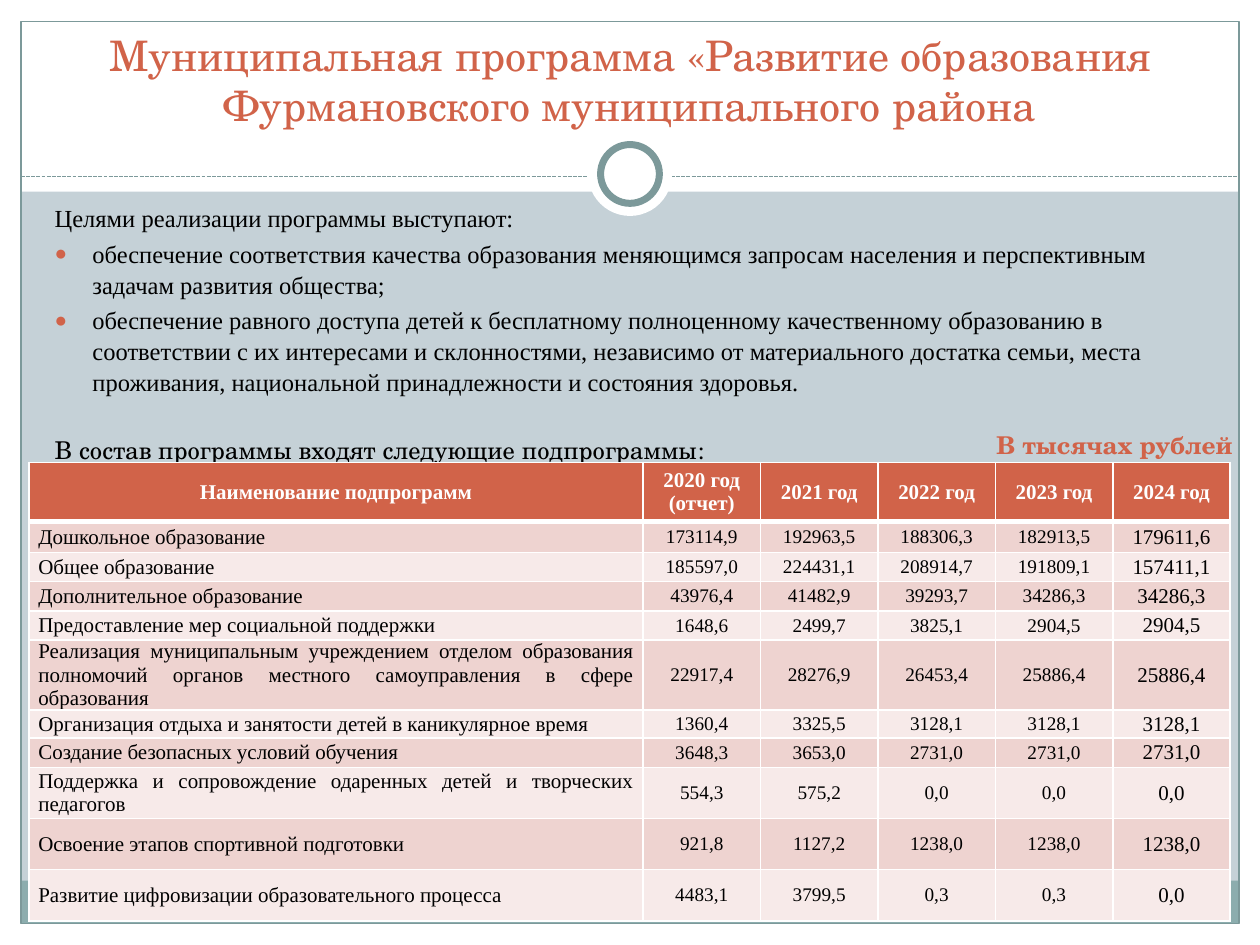
import pptx
import pptx.dml.color
import pptx.enum.dml
import pptx.enum.shapes
import pptx.enum.text
import pptx.oxml.ns
import pptx.util
from lxml import etree

Pt = pptx.util.Pt
Shape = pptx.enum.shapes.MSO_SHAPE
Align = pptx.enum.text.PP_ALIGN
Anchor = pptx.enum.text.MSO_ANCHOR

COLORS = {
    "background": "C5D1D7",
    "white": "FFFFFF",
    "black": "000000",
    "accent": "D16349",
    "frame": "7C999A",
    "strip": "8CADAE",
    "dark_band": "EED3D0",
    "light_band": "F7EAE9",
}
SERIF = "Times New Roman"
DISPLAY = "TeX Gyre Schola"

TITLE = "Муниципальная программа «Развитие образования Фурмановского муниципального района"
GOALS_HEADING = "Целями реализации программы выступают:"
GOALS = [
    "обеспечение соответствия качества образования меняющимся запросам населения и перспективным задачам развития общества;",
    "обеспечение равного доступа детей к бесплатному полноценному качественному образованию в соответствии с их интересами и склонностями, независимо от материального достатка семьи, места проживания, национальной принадлежности и состояния здоровья.",
]
SUBPROGRAMS_HEADING = "В состав программы входят следующие подпрограммы:"

HEADER = ["Наименование подпрограмм", "2020 год (отчет)", "2021 год", "2022 год", "2023 год", "2024 год"]
SUBPROGRAMS = [
    ["Дошкольное образование", "173114,9", "192963,5", "188306,3", "182913,5", "179611,6"],
    ["Общее образование", "185597,0", "224431,1", "208914,7", "191809,1", "157411,1"],
    ["Дополнительное образование", "43976,4", "41482,9", "39293,7", "34286,3", "34286,3"],
    ["Предоставление мер социальной поддержки", "1648,6", "2499,7", "3825,1", "2904,5", "2904,5"],
    ["Реализация муниципальным учреждением отделом образования полномочий органов местного самоуправления в сфере образования",
     "22917,4", "28276,9", "26453,4", "25886,4", "25886,4"],
    ["Организация отдыха и занятости детей в каникулярное время", "1360,4", "3325,5", "3128,1", "3128,1", "3128,1"],
    ["Создание безопасных условий обучения", "3648,3", "3653,0", "2731,0", "2731,0", "2731,0"],
    ["Поддержка и сопровождение одаренных детей и творческих педагогов", "554,3", "575,2", "0,0", "0,0", "0,0"],
    ["Освоение этапов спортивной подготовки", "921,8", "1127,2", "1238,0", "1238,0", "1238,0"],
    ["Развитие цифровизации образовательного процесса", "4483,1", "3799,5", "0,3", "0,3", "0,0"],
]
COLUMN_WIDTHS = [350.8] + [67.1] * 5
ROW_HEIGHTS = [34, 17.5, 16.75, 16.75, 16.75, 40, 16, 16.75, 29.25, 29.25, 29.25]


def color(name):
    return pptx.dml.color.RGBColor.from_string(COLORS[name])


def add_child(parent, tag, **attributes):
    return etree.SubElement(parent, pptx.oxml.ns.qn(tag), attributes)


def add_run(paragraph, text, size, font, color_name, bold=False):
    run = paragraph.add_run()
    run.text = text
    run.font.size = Pt(size)
    run.font.name = font
    run.font.bold = bold
    run.font.color.rgb = color(color_name)


def place(shape, left, top, width, height):
    shape.left, shape.top = Pt(left), Pt(top)
    shape.width, shape.height = Pt(width), Pt(height)


def add_panel(slide, kind, box, fill=None, line=None, line_width=0.75):
    shape = slide.shapes.add_shape(kind, *map(Pt, box))
    shape.shadow.inherit = False
    if fill:
        shape.fill.solid()
        shape.fill.fore_color.rgb = color(fill)
    else:
        shape.fill.background()
    if line:
        shape.line.color.rgb = color(line)
        shape.line.width = Pt(line_width)
    else:
        shape.line.fill.background()


def add_divider(slide):
    divider = slide.shapes.add_connector(
        pptx.enum.shapes.MSO_CONNECTOR.STRAIGHT, Pt(12), Pt(100.8), Pt(708), Pt(100.8))
    divider.line.color.rgb = color("frame")
    divider.line.width = Pt(0.75)
    divider.line.dash_style = pptx.enum.dml.MSO_LINE.SQUARE_DOT
    add_child(divider._element.spPr, "a:effectLst")


def add_frame(slide):
    for box in [(0, 528, 720, 12), (0, 0, 720, 109.5), (0, 0, 12, 540), (708, 0, 12, 540)]:
        add_panel(slide, Shape.RECTANGLE, box, "white")
    add_panel(slide, Shape.RECTANGLE, (12, 503.3, 696, 24.5), "strip")
    add_panel(slide, Shape.RECTANGLE, (12, 12.25, 696, 515.5), line="frame")
    add_divider(slide)
    add_panel(slide, Shape.OVAL, (336, 75.4, 48, 48), "white")
    add_panel(slide, Shape.OVAL, (343.2, 82.6, 33.6, 33.6), "white", "frame", 4)


def fill_title(slide):
    title = slide.shapes.title
    slide.shapes._spTree.append(title._element)
    place(title, 24, 18, 672, 60)
    frame = title.text_frame
    frame.auto_size = pptx.enum.text.MSO_AUTO_SIZE.NONE
    frame.vertical_anchor = Anchor.BOTTOM
    paragraph = frame.paragraphs[0]
    paragraph.alignment = Align.CENTER
    add_run(paragraph, TITLE, 24, DISPLAY, "accent")


def format_body_paragraph(paragraph, space_before, bulleted):
    paragraph.space_before = Pt(space_before)
    paragraph.line_spacing = 1.05
    properties = paragraph._p.get_or_add_pPr()
    properties.set("marL", str(Pt(21.6)))
    properties.set("indent", str(Pt(-21.6)))
    if bulleted:
        add_child(add_child(properties, "a:buClr"), "a:srgbClr", val=COLORS["accent"])
        add_child(properties, "a:buSzPct", val="85000")
        add_child(properties, "a:buChar", char="●")
    else:
        add_child(properties, "a:buNone")


def fill_body(slide):
    body = slide.placeholders[1]
    slide.shapes._spTree.append(body._element)
    place(body, 24, 111.6, 669.6, 153.4)
    frame = body.text_frame
    frame.auto_size = pptx.enum.text.MSO_AUTO_SIZE.NONE
    lines = [(GOALS_HEADING, SERIF, 2.8, False)]
    lines += [(goal, SERIF, 2.8, True) for goal in GOALS]
    lines.append((SUBPROGRAMS_HEADING, DISPLAY, 21, False))
    for index, (text, font, space_before, bulleted) in enumerate(lines):
        paragraph = frame.add_paragraph() if index else frame.paragraphs[0]
        format_body_paragraph(paragraph, space_before, bulleted)
        add_run(paragraph, text, 14, font, "black")


def add_borders(cell, bottom_width):
    properties = cell._tc.get_or_add_tcPr()
    for side, width in zip("LRTB", (1, 1, 1, bottom_width)):
        border = add_child(properties, f"a:ln{side}", w=str(Pt(width)))
        add_child(add_child(border, "a:solidFill"), "a:srgbClr", val=COLORS["white"])


def fill_cell(cell, text, row, column):
    header = row == 0
    cell.margin_left = cell.margin_right = Pt(5.2)
    cell.margin_top = cell.margin_bottom = 0
    cell.vertical_anchor = Anchor.MIDDLE
    add_borders(cell, 3 if header or row == 1 and False else 1)
    cell.fill.solid()
    fill = "accent" if header else "dark_band" if row % 2 else "light_band"
    cell.fill.fore_color.rgb = color(fill)
    paragraph = cell.text_frame.paragraphs[0]
    paragraph.alignment = Align.CENTER if header or column else Align.JUSTIFY
    size = 11 if not header and 1 <= column <= 4 else 12
    add_run(paragraph, text, size, SERIF, "white" if header else "black", header)


def add_subprogram_table(slide):
    table = slide.shapes.add_table(
        len(ROW_HEIGHTS), len(COLUMN_WIDTHS), Pt(16.7), Pt(264.2),
        Pt(sum(COLUMN_WIDTHS)), Pt(sum(ROW_HEIGHTS))).table
    for column, width in zip(table.columns, COLUMN_WIDTHS):
        column.width = Pt(width)
    for row, height in zip(table.rows, ROW_HEIGHTS):
        row.height = Pt(height)
    for row, texts in enumerate([HEADER] + SUBPROGRAMS):
        for column, text in enumerate(texts):
            fill_cell(table.cell(row, column), text, row, column)


def add_unit_label(slide):
    label = slide.shapes.add_textbox(Pt(562.3), Pt(242), Pt(163.4), Pt(33.8))
    label.text_frame.word_wrap = True
    add_run(label.text_frame.paragraphs[0], "В тысячах рублей", 14, DISPLAY, "accent", True)


def main():
    presentation = pptx.Presentation()
    presentation.slide_width, presentation.slide_height = Pt(720), Pt(540)
    slide = presentation.slides.add_slide(presentation.slide_layouts[1])
    slide.background.fill.solid()
    slide.background.fill.fore_color.rgb = color("background")
    add_frame(slide)
    fill_title(slide)
    fill_body(slide)
    add_subprogram_table(slide)
    add_unit_label(slide)
    presentation.save("out.pptx")


if __name__ == "__main__":
    main()
